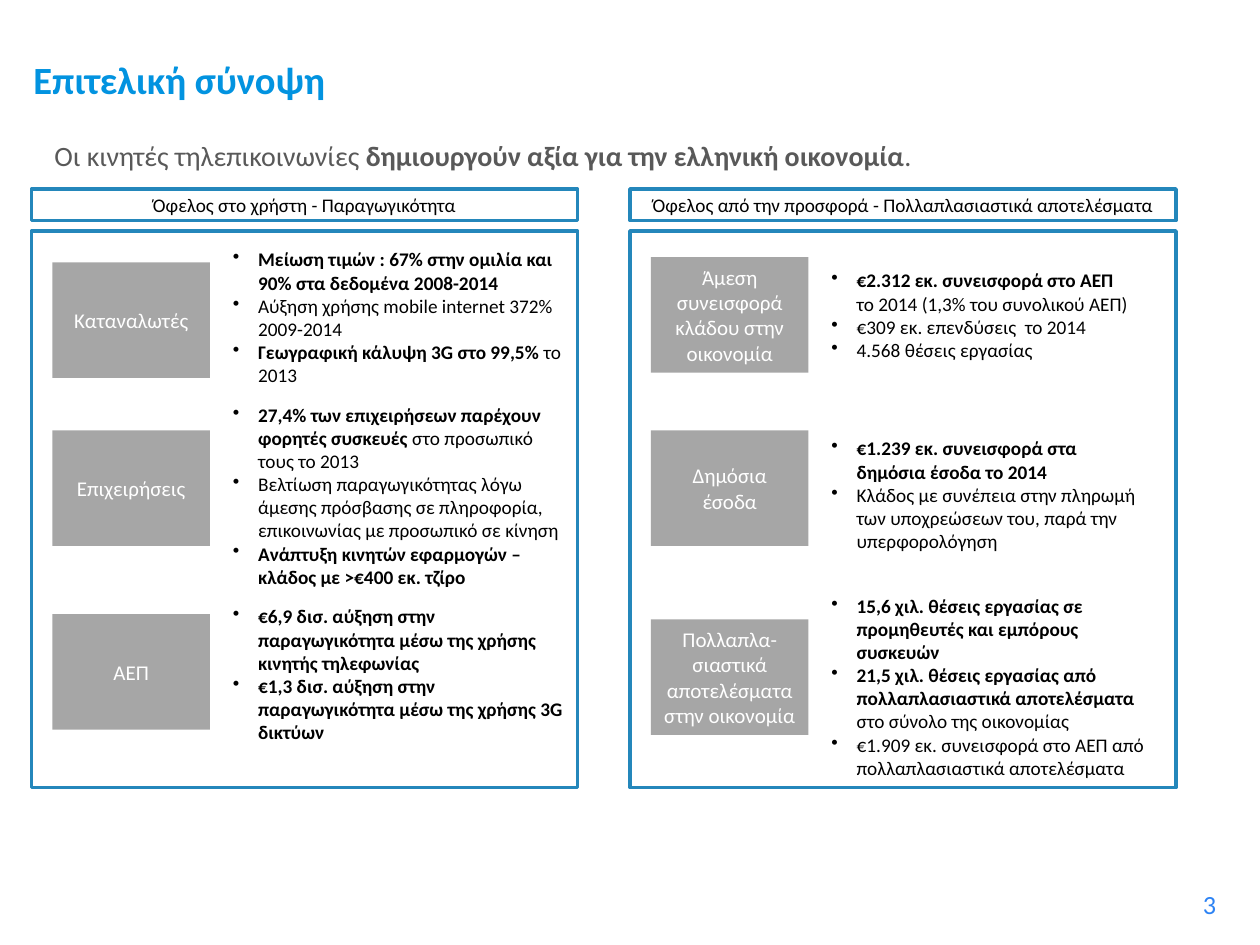
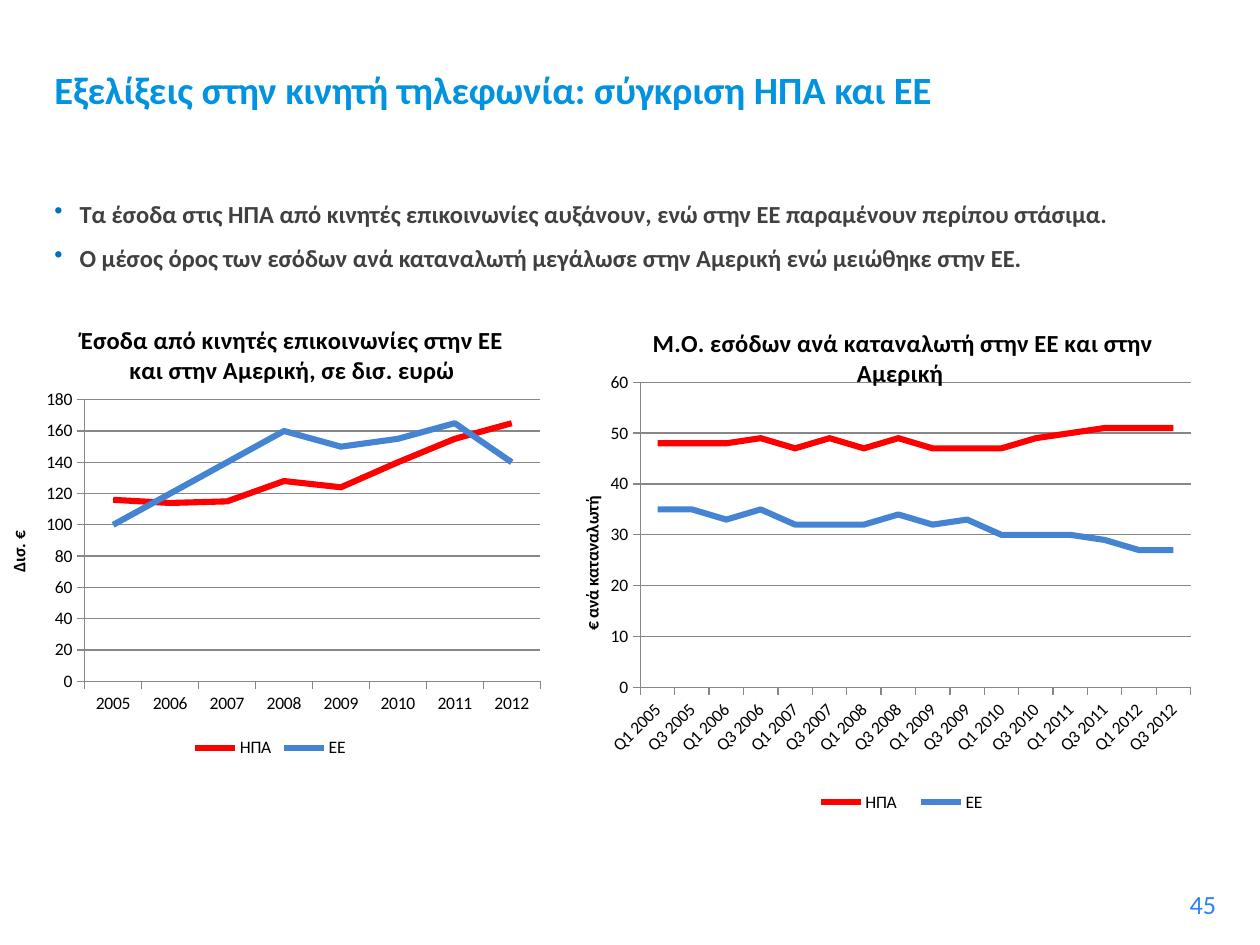
from pptx import Presentation
from pptx.chart.data import CategoryChartData
from pptx.dml.color import RGBColor
from pptx.enum.chart import XL_CHART_TYPE, XL_LEGEND_POSITION, XL_TICK_MARK
from pptx.enum.shapes import MSO_SHAPE
from pptx.enum.text import MSO_ANCHOR, PP_ALIGN
from pptx.oxml import parse_xml
from pptx.oxml.ns import nsdecls, qn
from pptx.util import Inches, Pt

# Grid: 120 columns by 90 rows of one twelfth of an inch
CELL = Inches(1) / 12
COLUMNS, ROWS = 120, 90

FONT = "Calibri"
TITLE_BLUE = RGBColor(0x02, 0x93, 0xE0)
NUMBER_BLUE = RGBColor(0x2D, 0x83, 0xF4)
FRAME_BLUE = RGBColor(0x24, 0x87, 0xBB)
CARD_GREY = RGBColor(0xA6, 0xA6, 0xA6)
LEAD_GREY = RGBColor(0x59, 0x59, 0x59)
BODY_GREY = RGBColor(0x40, 0x40, 0x40)
GRID_GREY = RGBColor(0x87, 0x87, 0x87)
WHITE = RGBColor(0xFF, 0xFF, 0xFF)
BLACK = RGBColor(0, 0, 0)
SERIES_COLORS = (RGBColor(0xFF, 0, 0), RGBColor(0x45, 0x84, 0xD3))
BULLET_BLUE = "0070C0"

LEFT, CENTER, RIGHT = PP_ALIGN.LEFT, PP_ALIGN.CENTER, PP_ALIGN.RIGHT
TOP, MIDDLE = MSO_ANCHOR.TOP, MSO_ANCHOR.MIDDLE
RECTANGLE = MSO_SHAPE.RECTANGLE
LINE_CHART = XL_CHART_TYPE.LINE
LEGEND_BOTTOM = XL_LEGEND_POSITION.BOTTOM
TICK_OUTSIDE = XL_TICK_MARK.OUTSIDE

# Each paragraph is a list of (text, bold) runs
PANELS = (
    {"column": 3, "heading": "Όφελος στο χρήστη - Παραγωγικότητα", "rows": (
        ("Καταναλωτές", 25, (23, 34, 14.5), (
            [("Μείωση τιμών : 67% στην ομιλία και 90% στα δεδομένα 2008-2014", True)],
            [("Αύξηση χρήσης mobile internet 372% 2009-2014", False)],
            [("Γεωγραφική κάλυψη 3G στο 99,5%", True), (" το 2013", False)])),
        ("Επιχειρήσεις", 41, (37.8, 34, 21.2), (
            [("27,4% των επιχειρήσεων παρέχουν φορητές συσκευές ", True),
             ("στο προσωπικό τους το 2013", False)],
            [("Βελτίωση παραγωγικότητας λόγω άμεσης πρόσβασης σε πληροφορία, "
              "επικοινωνίας με προσωπικό σε κίνηση", False)],
            [("Ανάπτυξη κινητών εφαρμογών – κλάδος με >€400 εκ. τζίρο", True)])),
        ("ΑΕΠ", 58.5, (57, 34, 14.5), (
            [("€6,9 δισ. αύξηση στην παραγωγικότητα μέσω της χρήσης "
              "κινητής τηλεφωνίας", True)],
            [("€1,3 δισ. αύξηση στην παραγωγικότητα μέσω της χρήσης 3G δικτύων", True)])),
    )},
    {"column": 60, "heading": "Όφελος από την προσφορά - Πολλαπλασιαστικά αποτελέσματα", "rows": (
        ("Άμεση συνεισφορά κλάδου στην οικονομία", 24.5, (25, 31, 10), (
            [("€2.312 εκ. συνεισφορά στο ΑΕΠ ", True),
             ("το 2014 (1,3% του συνολικού ΑΕΠ)", False)],
            [("€309 εκ. επενδύσεις  το 2014", False)],
            [("4.568 θέσεις εργασίας", False)])),
        ("Δημόσια έσοδα", 41, (41, 32, 12.4), (
            [("€1.239 εκ. συνεισφορά στα δημόσια έσοδα το 2014", True)],
            [("Κλάδος με συνέπεια στην πληρωμή των υποχρεώσεων του, "
              "παρά την υπερφορολόγηση", False)])),
        ("Πολλαπλα-σιαστικά αποτελέσματα στην οικονομία", 59, (56, 33, 19), (
            [("15,6 χιλ. θέσεις εργασίας σε προμηθευτές και εμπόρους συσκευών", True)],
            [("21,5 χιλ. θέσεις εργασίας από πολλαπλασιαστικά αποτελέσματα ", True),
             ("στο σύνολο της οικονομίας", False)],
            [("€1.909 εκ. συνεισφορά στο ΑΕΠ από πολλαπλασιαστικά αποτελέσματα", False)])),
    )},
)

# Layouts are shares of the chart: left, top, width, height
CHARTS = (
    {"box": (0, 28, 56, 46),
     "title": "Έσοδα από κινητές επικοινωνίες στην ΕΕ και στην Αμερική, σε δισ. ευρώ",
     "axis_title": "Δισ. €", "maximum": 180, "unit": 20, "rotation": 0,
     "categories": [str(year) for year in range(2005, 2013)],
     "series": {"ΗΠΑ": (116, 114, 115, 128, 124, 140, 155, 165),
                "ΕΕ": (100, 120, 140, 160, 150, 155, 165, 140)},
     "title_at": (0.13, 0.05), "plot_at": (0.144, 0.219, 0.775, 0.583),
     "legend_at": (0.32, 0.91, 0.28, 0.06)},
    {"box": (55, 27, 63, 52),
     "title": "Μ.Ο. εσόδων ανά καταναλωτή στην ΕΕ και στην Αμερική ",
     "axis_title": "€ ανά καταναλωτή", "maximum": 60, "unit": 10, "rotation": -45,
     "categories": [f"Q{quarter} {year}" for year in range(2005, 2013) for quarter in (1, 3)],
     "series": {"ΗΠΑ": (48, 48, 48, 49, 47, 49, 47, 49, 47, 47, 47, 49, 50, 51, 51, 51),
                "ΕΕ": (35, 35, 33, 35, 32, 32, 32, 34, 32, 33, 30, 30, 30, 29, 27, 27)},
     "title_at": (0.107, 0.07), "plot_at": (0.095, 0.181, 0.832, 0.559),
     "legend_at": (0.34, 0.92, 0.3, 0.06)},
)


def grid(*box):
    return [round(value * CELL) for value in box]


def set_font(font, size, color, bold=False):
    values = {"name": FONT, "size": Pt(size), "bold": bold}
    for name, value in values.items():
        setattr(font, name, value)
    font.color.rgb = color


def add_bullet(paragraph, color):
    properties = paragraph._p.get_or_add_pPr()
    properties.set("marL", str(Inches(0.2)))
    properties.set("indent", str(-Inches(0.2)))
    if color:
        properties.append(parse_xml(
            f'<a:buClr {nsdecls("a")}><a:srgbClr val="{color}"/></a:buClr>'))
    properties.append(parse_xml(f'<a:buChar {nsdecls("a")} char="•"/>'))


def write(shape, paragraphs, size, color, align=LEFT, anchor=TOP,
          bullets=False, bullet_color=None, line_spacing=None):
    frame = shape.text_frame
    frame.word_wrap = True
    frame.vertical_anchor = anchor
    for index, runs in enumerate(paragraphs):
        paragraph = frame.add_paragraph() if index else frame.paragraphs[0]
        paragraph.alignment = align
        if line_spacing:
            paragraph.line_spacing = line_spacing
        if bullets:
            add_bullet(paragraph, bullet_color)
        for text, bold in runs:
            run = paragraph.add_run()
            run.text = text
            set_font(run.font, size, color, bold)


def add_text(slide, box, paragraphs, size, color, **options):
    write(slide.shapes.add_textbox(*grid(*box)), paragraphs, size, color, **options)


def add_box(slide, box, fill=None, line=None):
    shape = slide.shapes.add_shape(RECTANGLE, *grid(*box))
    shape.shadow.inherit = False
    if fill:
        shape.fill.solid()
        shape.fill.fore_color.rgb = fill
    else:
        shape.fill.background()
    if line:
        shape.line.color.rgb = line
        shape.line.width = Pt(2)
    else:
        shape.line.fill.background()
    return shape


def add_page(presentation, title, title_box, number):
    slide = presentation.slides.add_slide(presentation.slide_layouts[6])
    add_text(slide, (89, 84, 28, 4.8), [[(number, False)]], 15, NUMBER_BLUE, align=RIGHT)
    add_text(slide, title_box, [[(title, True)]], 22, TITLE_BLUE, anchor=MIDDLE)
    return slide


def add_panel(slide, column, heading, rows):
    # Heading strip and frame
    strip = add_box(slide, (column, 18, 52, 3), line=FRAME_BLUE)
    write(strip, [[(heading, False)]], 11, BLACK, align=CENTER, anchor=MIDDLE)
    add_box(slide, (column, 22, 52, 53), line=FRAME_BLUE)
    # Grey cards with their bullets
    for label, card_top, (text_top, width, height), paragraphs in rows:
        card = add_box(slide, (column + 2, card_top, 15, 11), fill=CARD_GREY)
        write(card, [[(label, False)]], 12, WHITE, align=CENTER, anchor=MIDDLE)
        add_text(slide, (column + 18, text_top, width, height), paragraphs,
                 11, BLACK, bullets=True)


def set_layout(parent, shares, inner=False):
    """Give a chart part a fixed place inside its chart."""
    target = '<c:layoutTarget val="inner"/>' if inner else ""
    modes = '<c:xMode val="edge"/><c:yMode val="edge"/>'
    places = "".join(f'<c:{name} val="{share}"/>' for name, share in zip("xywh", shares))
    layout = parse_xml(f'<c:layout {nsdecls("c")}><c:manualLayout>{target}{modes}{places}'
                       '</c:manualLayout></c:layout>')
    present = parent.find(qn("c:layout"))
    overlay = parent.find(qn("c:overlay"))
    if present is not None:
        parent.replace(present, layout)
    elif overlay is not None:
        overlay.addprevious(layout)
    else:
        parent.insert(0, layout)


def write_chart_title(title, text, size):
    title.text_frame.text = text
    set_font(title.text_frame.paragraphs[0].runs[0].font, size, BLACK, True)


def add_line_chart(slide, spec_values):
    data = CategoryChartData()
    data.categories = spec_values["categories"]
    for name, values in spec_values["series"].items():
        data.add_series(name, values)
    chart = slide.shapes.add_chart(LINE_CHART, *grid(*spec_values["box"]), data).chart
    set_font(chart.font, 10, BLACK)

    # Title, plot area and legend
    chart.has_title = True
    write_chart_title(chart.chart_title, spec_values["title"], 14)
    chart.chart_title.include_in_layout = False
    set_layout(chart.chart_title._element, spec_values["title_at"])
    set_layout(chart._chartSpace.chart.plotArea, spec_values["plot_at"], inner=True)
    chart.has_legend = True
    chart.legend.position = LEGEND_BOTTOM
    chart.legend.include_in_layout = False
    set_layout(chart.legend._element, spec_values["legend_at"])

    # Axes
    value_axis, category_axis = chart.value_axis, chart.category_axis
    scale = {"minimum_scale": 0, "maximum_scale": spec_values["maximum"],
             "major_unit": spec_values["unit"], "has_major_gridlines": True}
    for name, value in scale.items():
        setattr(value_axis, name, value)
    write_chart_title(value_axis.axis_title, spec_values["axis_title"], 10)
    for axis in (value_axis, category_axis):
        axis.major_tick_mark = TICK_OUTSIDE
        set_font(axis.tick_labels.font, 10, BLACK)
    for part in (value_axis, category_axis, value_axis.major_gridlines):
        part.format.line.color.rgb = GRID_GREY
        part.format.line.width = Pt(0.75)
    label_body = category_axis._element.find(qn("c:txPr")).find(qn("a:bodyPr"))
    label_body.set("rot", str(spec_values["rotation"] * 60000))

    # Series
    chart.plots[0].vary_by_categories = False
    for series, color in zip(chart.plots[0].series, SERIES_COLORS):
        series.smooth = False
        series.format.line.color.rgb = color
        series.format.line.width = Pt(3.5)


def build_summary(presentation):
    slide = add_page(presentation, "Επιτελική σύνοψη", (2, 2, 94, 11), "3")
    add_text(slide, (4, 12.6, 113.4, 4.4), [[
        ("Οι κινητές τηλεπικοινωνίες ", False),
        ("δημιουργούν αξία για την ελληνική οικονομία", True),
        (".", False)]], 16, LEAD_GREY)
    for panel in PANELS:
        add_panel(slide, **panel)


def build_comparison(presentation):
    slide = add_page(presentation, "Εξελίξεις στην κινητή τηλεφωνία: σύγκριση ΗΠΑ και ΕΕ",
                     (4, 3, 91, 11), "45")
    add_text(slide, (4, 17, 111, 71), [
        [("Τα έσοδα στις ΗΠΑ από κινητές επικοινωνίες αυξάνουν, "
          "ενώ στην ΕΕ παραμένουν περίπου στάσιμα.", True)],
        [("Ο μέσος όρος των εσόδων ανά καταναλωτή μεγάλωσε στην Αμερική "
          "ενώ μειώθηκε στην ΕΕ.", True)],
    ], 14, BODY_GREY, bullets=True, bullet_color=BULLET_BLUE, line_spacing=1.5)
    for chart_values in CHARTS:
        add_line_chart(slide, chart_values)


def main():
    presentation = Presentation()
    presentation.slide_width, presentation.slide_height = grid(COLUMNS, ROWS)
    build_summary(presentation)
    build_comparison(presentation)
    presentation.save("out.pptx")


if __name__ == "__main__":
    main()
